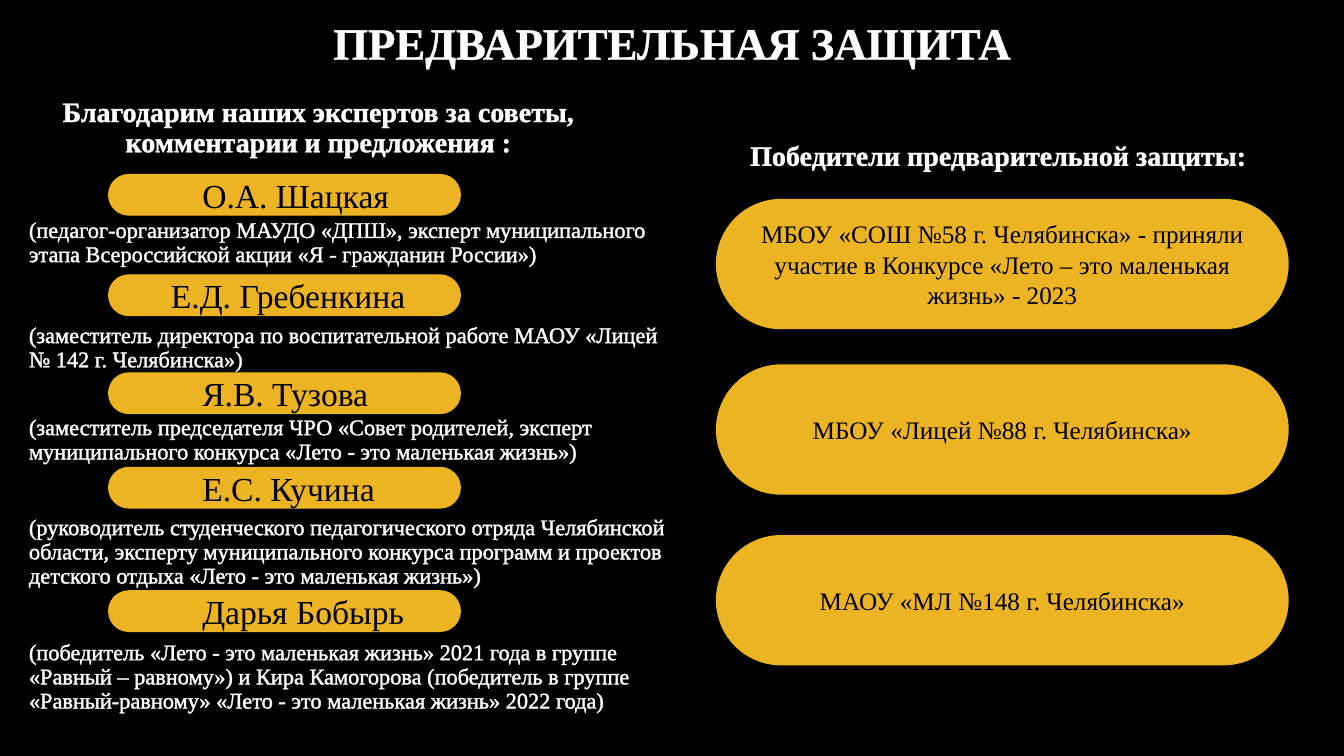
from dataclasses import dataclass

from lxml.etree import SubElement
from pptx import Presentation
from pptx.dml.color import RGBColor
from pptx.enum.shapes import MSO_SHAPE as Preset
from pptx.enum.text import MSO_ANCHOR as Anchor, PP_ALIGN as Align
from pptx.oxml.ns import qn
from pptx.util import Cm, Pt


@dataclass(frozen=True)
class Theme:
    font: str = "Times New Roman"
    background: str = "000000"
    light: str = "FFFFFF"
    dark: str = "000000"
    accent: str = "ECB423"
    title: int = 32
    heading: int = 20
    name: int = 24
    winner: int = 18
    description: int = 16
    outline: float = 0.75
    border: float = 1
    tight: float = 0.9


@dataclass(frozen=True)
class Box:
    left: float
    top: float
    width: float
    height: float

    def inner(self, left, top, width, height):
        return Box(self.left + left, self.top + top, width, height)

    def lengths(self):
        return [Cm(value) for value in (self.left, self.top, self.width, self.height)]


THEME = Theme()
TITLE_BOX = Box(2.34, 0.05, 29.21, 2.18)
EXPERTS_BOX = Box(0.48, 1.83, 16.66, 16.8)
WINNERS_BOX = Box(18.06, 3.45, 14.4, 13.3)

EXPERTS = [
    ("О.А. Шацкая", 2.21, 2.57, 3.68,
     "(педагог-организатор МАУДО «ДПШ», эксперт муниципального этапа "
     "Всероссийской акции «Я - гражданин России»)"),
    ("Е.Д. Гребенкина", 1.42, 5.1, 6.33,
     "(заместитель директора по воспитательной работе МАОУ «Лицей № 142 г. Челябинска»)"),
    ("Я.В. Тузова", 2.21, 7.57, 8.65,
     "(заместитель председателя ЧРО «Совет родителей, эксперт "
     "муниципального конкурса «Лето - это маленькая жизнь»)"),
    ("Е.С. Кучина", 2.21, 9.95, 11.17,
     "(руководитель студенческого педагогического отряда Челябинской области, "
     "эксперту муниципального конкурса программ и проектов детского отдыха "
     "«Лето - это маленькая жизнь»)"),
    ("Дарья Бобырь", 2.21, 13.06, 14.32,
     "(победитель «Лето - это маленькая жизнь» 2021 года в группе "
     "«Равный – равному») и Кира Камогорова (победитель в группе "
     "«Равный-равному» «Лето - это маленькая жизнь» 2022 года)"),
]

WINNERS = [
    (1.58, "МБОУ «СОШ №58 г. Челябинска» - приняли участие в Конкурсе "
           "«Лето – это маленькая жизнь» - 2023"),
    (5.75, "МБОУ «Лицей №88 г. Челябинска»"),
    (10.05, "МАОУ «МЛ №148 г. Челябинска»"),
]


def apply(target, values):
    for name, value in values.items():
        setattr(target, name, value)


def write(shape, text, size, color, bold=False, align=Align.LEFT,
          anchor=Anchor.MIDDLE, spacing=1.0, side=0.25, end=0.25, edge=0.0):
    frame = shape.text_frame
    apply(frame, {
        "word_wrap": True,
        "vertical_anchor": anchor,
        "margin_left": Cm(side),
        "margin_right": Cm(end),
        "margin_top": Cm(edge),
        "margin_bottom": Cm(edge),
    })
    paragraph = frame.paragraphs[0]
    apply(paragraph, {"alignment": align, "line_spacing": spacing})
    run = paragraph.add_run()
    run.text = text
    apply(run.font, {"name": THEME.font, "size": Pt(size), "bold": bold})
    run.font.color.rgb = RGBColor.from_string(color)
    properties = run.font._element
    outline = SubElement(properties, qn("a:ln"), w=str(Pt(THEME.outline)))
    fill = SubElement(outline, qn("a:solidFill"))
    SubElement(fill, qn("a:srgbClr"), val=color)
    properties.insert(0, outline)


def add_text(slide, box, text, size, **format_values):
    shape = slide.shapes.add_textbox(*box.lengths())
    write(shape, text, size, THEME.light, spacing=THEME.tight, **format_values)


def add_pill(slide, box, text, size, **format_values):
    shape = slide.shapes.add_shape(Preset.ROUNDED_RECTANGLE, *box.lengths())
    shape.adjustments[0] = 0.5
    shape.shadow.inherit = False
    accent = RGBColor.from_string(THEME.accent)
    shape.fill.solid()
    shape.fill.fore_color.rgb = accent
    shape.line.color.rgb = accent
    shape.line.width = Pt(THEME.border)
    write(shape, text, size, THEME.dark, **format_values)


def add_title(slide, box):
    add_text(slide, box, "ПРЕДВАРИТЕЛЬНАЯ ЗАЩИТА", THEME.title,
             bold=True, align=Align.CENTER)


def add_experts(slide, box):
    add_text(slide, box.inner(0, 0, 15.09, 2.29),
             "Благодарим наших экспертов за советы, комментарии и предложения :",
             THEME.heading, bold=True, align=Align.CENTER,
             anchor=Anchor.BOTTOM, edge=0.13)
    for name, indent, pill_top, description_top, description in EXPERTS:
        add_pill(slide, box.inner(2.26, pill_top, 8.86, 1.02), name,
                 THEME.name, side=indent, end=0)
        add_text(slide, box.inner(0, description_top, box.width, 1.3), description,
                 THEME.description, anchor=Anchor.TOP)


def add_winners(slide, box):
    add_text(slide, box.inner(-0.1, 0, box.width, 1),
             "Победители предварительной защиты:",
             THEME.heading, bold=True, align=Align.CENTER)
    for top, winner in WINNERS:
        add_pill(slide, box.inner(0, top, box.width, 3.25), winner,
                 THEME.winner, align=Align.CENTER, side=0.57, end=0.57)


def main():
    presentation = Presentation()
    apply(presentation, {"slide_width": Cm(33.87), "slide_height": Cm(19.05)})
    slide = presentation.slides.add_slide(presentation.slide_layouts[6])
    background = slide.background.fill
    background.solid()
    background.fore_color.rgb = RGBColor.from_string(THEME.background)
    add_title(slide, TITLE_BOX)
    add_experts(slide, EXPERTS_BOX)
    add_winners(slide, WINNERS_BOX)
    presentation.save("out.pptx")


if __name__ == "__main__":
    main()
